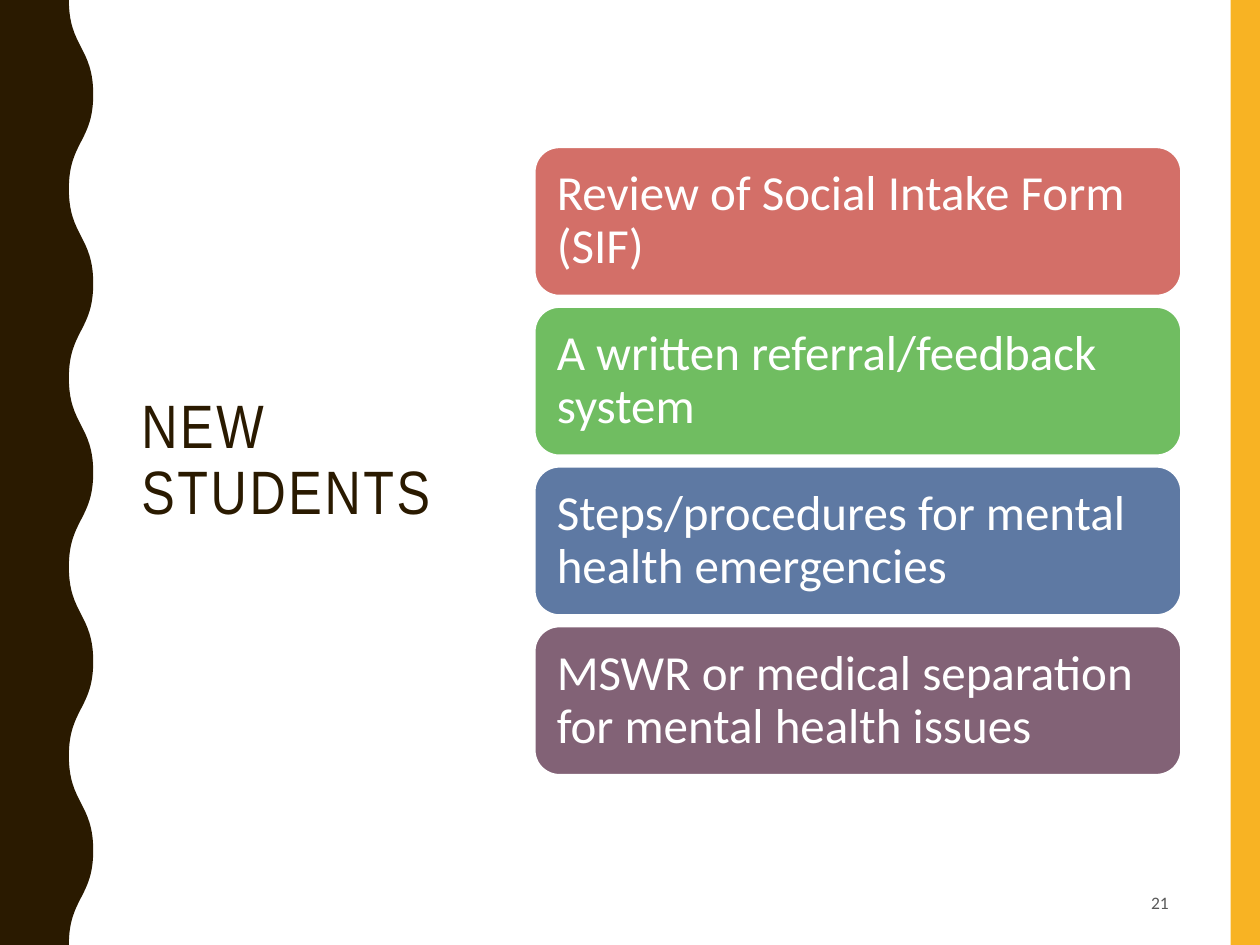
"""Build the New Students slide with four stacked topic cards."""
import copy

import pptx
import pptx.util
import pptx.dml.color
import pptx.enum.shapes
import pptx.enum.text
import pptx.oxml.ns

Cm = pptx.util.Cm
Pt = pptx.util.Pt
PP = pptx.enum.text.PP_ALIGN
SHAPE = pptx.enum.shapes.MSO_SHAPE
qn = pptx.oxml.ns.qn
COLORS = {
    "brown": "2A1A00", "gold": "F8B323", "white": "FFFFFF", "grey": "595959",
    "red": "D36F68", "green": "70BD61", "blue": "5E79A3", "plum": "826276",
}


def paint(sp, fill, line=None):
    sp.shadow.inherit = False
    sp.fill.solid()
    sp.fill.fore_color.rgb = pptx.dml.color.RGBColor.from_string(COLORS[fill])
    if line:
        sp.line.color.rgb = pptx.dml.color.RGBColor.from_string(COLORS[line])
        sp.line.width = Pt(1)
    else:
        sp.line.fill.background()


def write(sp, text, size, font, color, align=PP.LEFT, spacing=None):
    tf = sp.text_frame
    tf.word_wrap = True
    tf.vertical_anchor = pptx.enum.text.MSO_ANCHOR.MIDDLE
    p = tf.paragraphs[0]
    p.alignment = align
    p.line_spacing = spacing
    r = p.add_run()
    r.text = text
    r.font.size = Pt(size)
    r.font.name = font
    r.font.color.rgb = pptx.dml.color.RGBColor.from_string(COLORS[color])
    return r


prs = pptx.Presentation()
prs.slide_width, prs.slide_height = Cm(25.4), Cm(19.05)
s = prs.slides.add_slide(prs.slide_layouts[6])

sp = s.shapes.add_shape(SHAPE.RECTANGLE, Cm(24.81), 0, Cm(0.59), Cm(19.05))
paint(sp, "gold")

waves = 10
edge = [(Cm(1.88 if i % 2 else 1.39), Cm(19.05 * i / waves)) for i in range(waves + 1)]
fb = s.shapes.build_freeform(0, 0)
fb.add_line_segments(edge + [(0, Cm(19.05))], close=True)
sp = fb.convert_to_shape()
paint(sp, "brown")
lines = list(sp._element.iter(qn("a:lnTo")))
for line, (x0, y0), (x1, y1) in zip(lines[1:], edge, edge[1:]):
    line.tag = qn("a:cubicBezTo")
    end = line[0]
    for i, x in enumerate((x0, x1)):
        control = copy.deepcopy(end)
        control.set("x", str(x))
        control.set("y", str((y0 + y1) // 2))
        line.insert(i, control)

sp = s.shapes.add_textbox(Cm(2.6), Cm(1.78), Cm(7.06), Cm(15.04))
r = write(sp, "NEW STUDENTS", 35, "Arial Narrow", "brown", spacing=0.9)
r.font._element.set("spc", "150")

sp = s.shapes.add_textbox(Cm(17.94), Cm(17.7), Cm(5.87), Cm(0.97))
write(sp, "21", 10, "Calibri", "grey", PP.RIGHT)

cards = [
    ("Review of Social Intake Form (SIF)", "red"),
    ("A written referral/feedback system", "green"),
    ("Steps/procedures for mental health emergencies", "blue"),
    ("MSWR or medical separation for mental health issues", "plum"),
]
for i, (text, color) in enumerate(cards):
    sp = s.shapes.add_shape(SHAPE.ROUNDED_RECTANGLE, Cm(10.78), Cm(2.97 + 3.22 * i), Cm(13.03), Cm(2.99))
    paint(sp, color, "white")
    tf = sp.text_frame
    tf.margin_left = tf.margin_right = tf.margin_top = tf.margin_bottom = Cm(0.3)
    write(sp, text, 28, "Calibri", "white", spacing=0.9)

prs.save("out.pptx")
